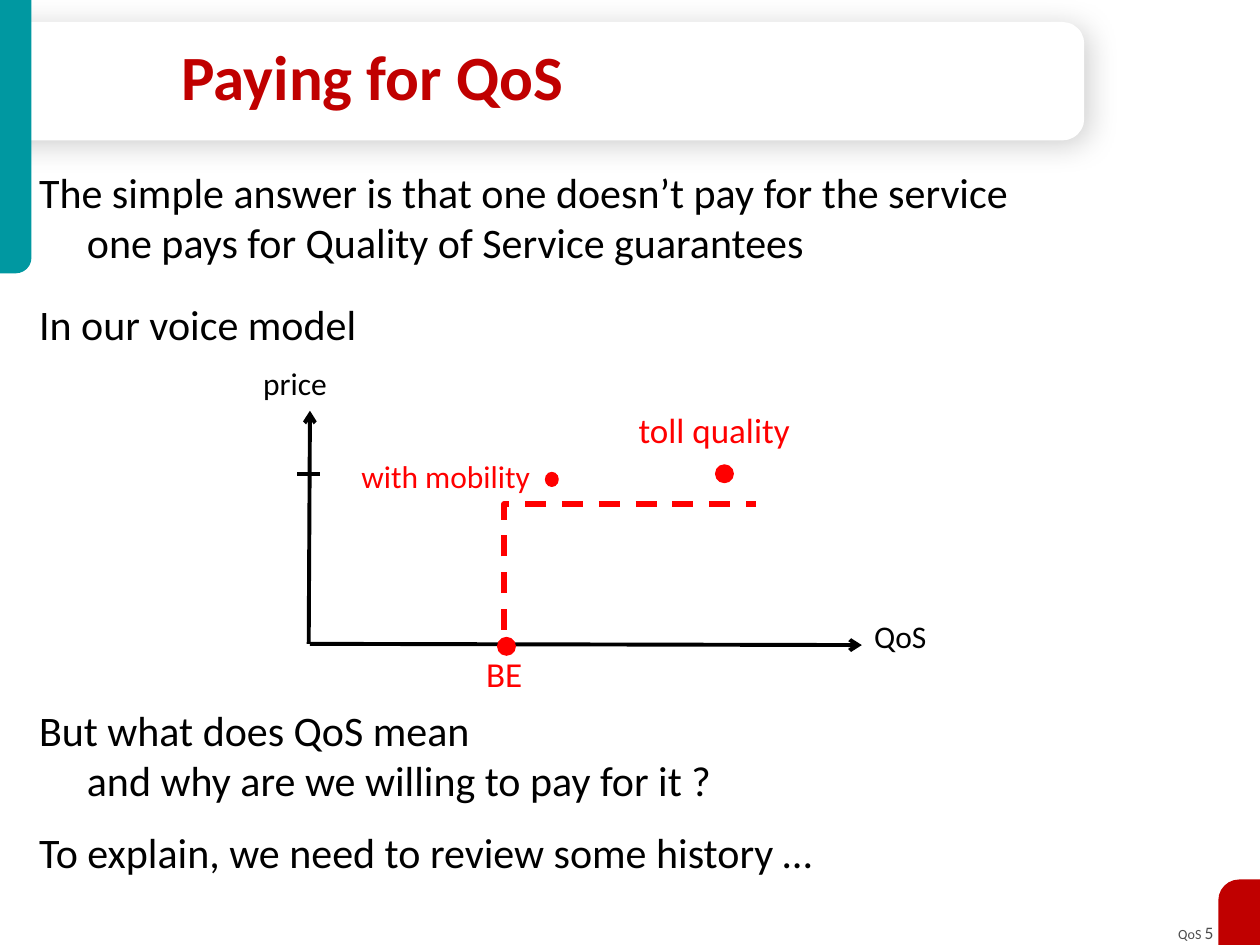
from lxml.etree import SubElement
from pptx import Presentation
from pptx.dml.color import RGBColor
from pptx.enum.dml import MSO_LINE
from pptx.enum.shapes import MSO_CONNECTOR, MSO_SHAPE as Shape
from pptx.enum.text import MSO_ANCHOR as Anchor, MSO_AUTO_SIZE, PP_ALIGN as Align
from pptx.oxml import parse_xml
from pptx.oxml.ns import nsdecls, qn
from pptx.util import Inches, Pt

COLORS = dict(white="FFFFFF", teal="0098A1", crimson="C00000", red="FF0000",
              black="000000", gray="4D4D4D")
FONT = "Calibri"
HANG = 0.38

TITLE = "Paying for QoS"
# text, left margin, first-line indent, space before in points
BODY = [
    ("The simple answer is that one doesn’t pay for the service", HANG, -HANG, 6),
    ("one pays for Quality of Service guarantees", HANG, 0, 0),
    ("In our voice model", HANG, -HANG, 18),
    ("But what does QoS mean", HANG, -HANG, 203),  # leaves room for the chart
    ("and why are we willing to pay for it ?", HANG, 0, 0),
    ("To explain, we need to review some history …", HANG, -HANG, 12),
]
# text, box, size, colour
LABELS = [
    ("QoS", (6.84, 4.85, 0.86, 0.5), 18, "black"),
    ("price", (1.99, 2.84, 1.05, 0.5), 18, "black"),
    ("BE", (3.76, 5.13, 0.62, 0.44), 20, "red"),
    ("toll quality", (4.97, 3.19, 1.74, 0.44), 20, "red"),
    ("with mobility", (2.77, 3.58, 1.74, 0.4), 18, "red"),
]
# start, end, has arrowhead
AXES = [
    ((2.46, 5.11), (6.84, 5.12), True),
    ((2.45, 5.11), (2.46, 3.26), True),
    ((2.36, 3.76), (2.54, 3.76), False),
]
DOTS = [(3.95, 5.06, 0.14, 0.14), (5.68, 3.69, 0.14, 0.14), (4.33, 3.75, 0.1, 0.11)]
CURVE_START = (4.03, 5.12)
CURVE = [
    ((4.02, 4.95), (4.01, 4.79), (4.08, 4.61)),
    ((4.14, 4.43), (4.22, 4.18), (4.42, 4.05)),
    ((4.62, 3.91), (5.06, 3.84), (5.28, 3.8)),
    ((5.51, 3.76), (5.76, 3.8), (5.76, 3.8)),
]
STEPS = 12


def rgb(name):
    return RGBColor.from_string(COLORS[name])


def place(shape, box):
    shape.left, shape.top, shape.width, shape.height = map(Inches, box)


def write(paragraph, text, size, color="black", bold=False, align=Align.LEFT):
    run = paragraph.add_run()
    run.text = text
    run.font.name, run.font.size, run.font.bold = FONT, Pt(size), bold
    run.font.color.rgb = rgb(color)
    paragraph.alignment = align


def add_filled(kind, box, color, adjustments=(), outline=None):
    shape = slide.shapes.add_shape(kind, *map(Inches, box))
    shape.shadow.inherit = False
    shape.fill.solid()
    shape.fill.fore_color.rgb = rgb(color)
    if outline:
        shape.line.color.rgb = rgb(color)
        shape.line.width = Pt(outline)
    else:
        shape.line.fill.background()
    for index, value in enumerate(adjustments):
        shape.adjustments[index] = value
    return shape


def add_axis(start, end, arrow):
    axis = slide.shapes.add_connector(MSO_CONNECTOR.STRAIGHT, *map(Inches, start + end))
    axis.line.color.rgb = rgb("black")
    axis.line.width = Pt(2.25)
    if arrow:
        SubElement(axis.line._get_or_add_ln(), qn("a:tailEnd"), type="arrow")
    SubElement(axis._element.spPr, qn("a:effectLst"))


def curve_points(start, segments):
    """Sample a chain of cubic Bézier segments."""
    for first, second, end in segments:
        for step in range(1, STEPS + 1):
            t = step / STEPS
            weights = ((1 - t) ** 3, 3 * t * (1 - t) ** 2, 3 * t * t * (1 - t), t ** 3)
            yield tuple(sum(w * point[axis] for w, point in
                            zip(weights, (start, first, second, end)))
                        for axis in (0, 1))
        start = end


def add_curve():
    builder = slide.shapes.build_freeform(*CURVE_START, scale=Inches(1))
    builder.add_line_segments(list(curve_points(CURVE_START, CURVE)), close=False)
    curve = builder.convert_to_shape()
    curve.shadow.inherit = False
    curve.fill.background()
    curve.line.color.rgb = rgb("red")
    curve.line.width = Pt(3)
    curve.line.dash_style = MSO_LINE.DASH


def add_backdrop():
    """Banner and corner tabs, sent behind the placeholders."""
    banner = add_filled(Shape.ROUND_2_SAME_RECTANGLE, (3.83, -3.66, 0.94, 8.61),
                        "white", (0.184, 0))
    banner.rotation = 90
    banner._element.spPr.find(qn("a:effectLst")).append(parse_xml(
        f'<a:outerShdw {nsdecls("a")} blurRad="{Pt(17)}" dist="{Pt(3)}" dir="2700000" '
        f'algn="tl" rotWithShape="0"><a:srgbClr val="{COLORS["black"]}">'
        '<a:alpha val="19000"/></a:srgbClr></a:outerShdw>'))
    left_tab = add_filled(Shape.ROUND_1_RECTANGLE, (0, 0, 0.25, 2.17), "teal", (0.5,))
    left_tab._element.spPr.xfrm.set("flipV", "1")
    corner = add_filled(Shape.ROUND_1_RECTANGLE, (9.67, 6.98, 0.33, 0.52),
                        "crimson", (0.5,))
    corner._element.spPr.xfrm.set("flipH", "1")
    for position, part in enumerate((banner, left_tab, corner), start=2):
        slide.shapes._spTree.insert(position, part._element)


def fill_title():
    title = slide.shapes.title
    place(title, (1.34, 0.29, 5.45, 0.71))
    title.text_frame.vertical_anchor = Anchor.MIDDLE
    title.text_frame.auto_size = MSO_AUTO_SIZE.NONE
    heading = title.text_frame.paragraphs[0]
    heading.line_spacing = 0.85
    write(heading, TITLE, 36, color="crimson", bold=True)


def fill_body():
    body = slide.placeholders[1]
    place(body, (0.21, 1.27, 9.11, 5.9))
    frame = body.text_frame
    frame.auto_size = MSO_AUTO_SIZE.NONE
    for index, (text, margin, indent, before) in enumerate(BODY):
        paragraph = frame.add_paragraph() if index else frame.paragraphs[0]
        write(paragraph, text, 24)
        paragraph.space_before = Pt(before)
        properties = paragraph._p.get_or_add_pPr()
        properties.set("marL", str(Inches(margin)))
        properties.set("indent", str(Inches(indent)))
        SubElement(properties, qn("a:buNone"))


def add_label(box, wrap=True):
    label = slide.shapes.add_textbox(*map(Inches, box))
    label.text_frame.word_wrap = wrap
    return label.text_frame.paragraphs[0]


prs = Presentation()
prs.slide_width, prs.slide_height = Inches(10), Inches(7.5)
slide = prs.slides.add_slide(prs.slide_layouts[1])

add_backdrop()
fill_title()
fill_body()
for axis in AXES:
    add_axis(*axis)
for dot in DOTS:
    add_filled(Shape.OVAL, dot, "red", outline=0.75)
for text, box, size, color in LABELS:
    write(add_label(box), text, size, color=color)
add_curve()
footer = add_label((9.15, 7.27, 0.58, 0.27), wrap=False)
for text, size in (("QoS ", 8), ("5", 10)):
    write(footer, text, size, color="gray", align=Align.RIGHT)

prs.save("out.pptx")
